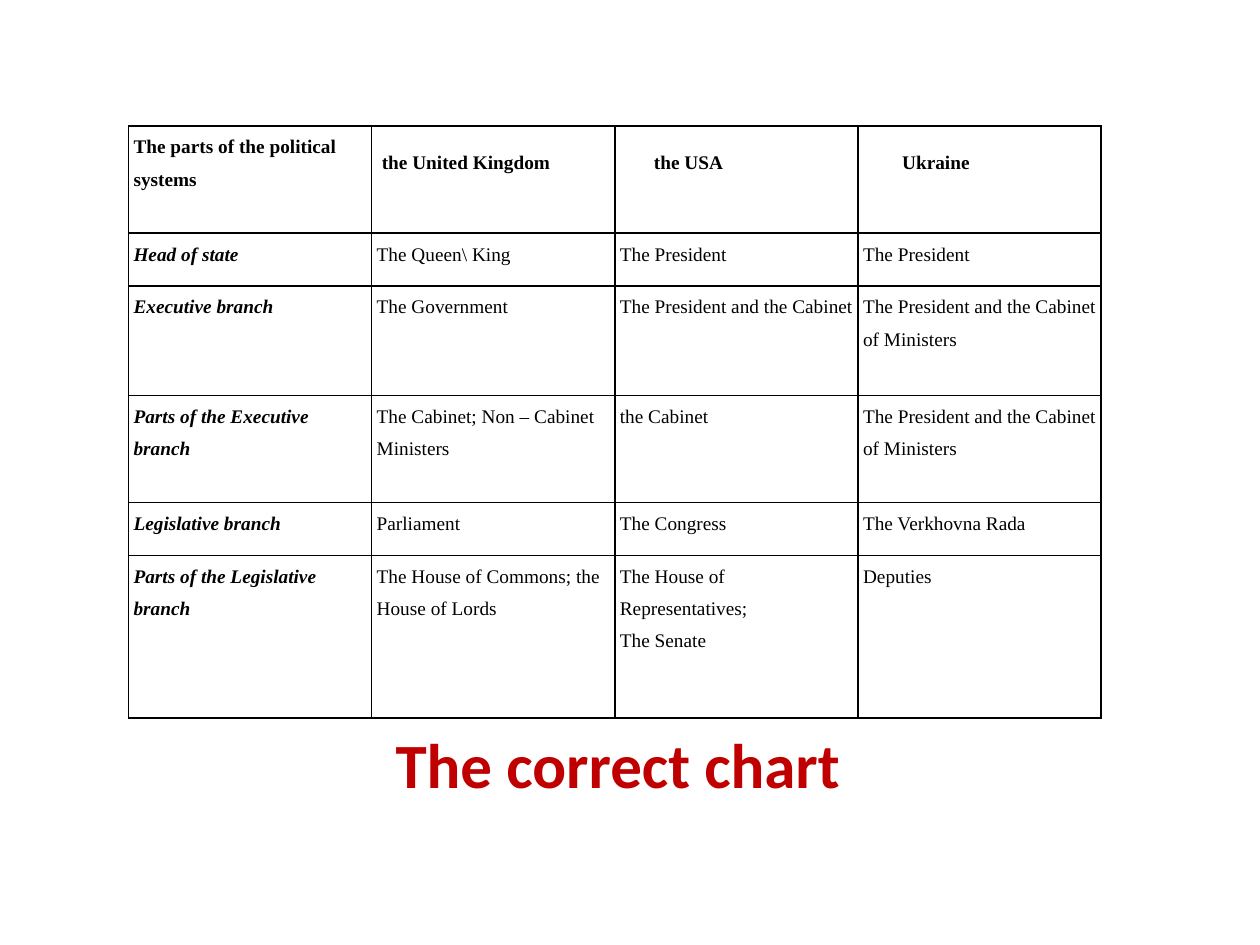
from lxml import etree
from pptx import Presentation
from pptx.dml.color import RGBColor
from pptx.enum.text import MSO_ANCHOR, PP_ALIGN
from pptx.oxml.ns import qn
from pptx.util import Inches, Pt

CENTER = PP_ALIGN.CENTER
BOTTOM = MSO_ANCHOR.BOTTOM
TITLE_ONLY = 5
COLORS = {"title": "C00000", "text": "000000", "border": "000000"}
COLUMN_WIDTH = 1.93
ROW_HEIGHTS = [0.85, 0.42, 0.87, 0.85, 0.42, 1.29]
HEADER_INDENTS = [0, 0.04, 0.27, 0.31]
HEADER_DROP = 0.12
CELL_MARGIN = 0.04
ROWS = [
    ["The parts of the political systems", "the United Kingdom", "the USA", "Ukraine"],
    ["Head of state", "The Queen\\ King", "The President", "The President"],
    ["Executive branch", "The Government", "The President and the Cabinet",
     "The President and the Cabinet of Ministers"],
    ["Parts of the Executive branch", "The Cabinet; Non – Cabinet Ministers",
     "the Cabinet", "The President and the Cabinet of Ministers"],
    ["Legislative branch", "Parliament", "The Congress", "The Verkhovna Rada"],
    ["Parts of the Legislative branch", "The House of Commons; the House of Lords",
     "The House of Representatives;\nThe Senate", "Deputies"],
]


def format_font(font, name, size, color, bold=False, italic=False):
    """Set the face, size, colour and weight of a font."""
    font.name = name
    font.size = Pt(size)
    font.color.rgb = RGBColor.from_string(COLORS[color])
    font.bold = bold
    font.italic = italic


def add_borders(cell):
    """Draw a thin solid line on all four sides of a cell."""
    properties = cell._tc.get_or_add_tcPr()
    for side in ("lnL", "lnR", "lnT", "lnB"):
        line = etree.SubElement(properties, qn(f"a:{side}"), w=str(Pt(1)))
        fill = etree.SubElement(line, qn("a:solidFill"))
        etree.SubElement(fill, qn("a:srgbClr"), val=COLORS["border"])


def fill_cell(cell, text, bold, italic, indent, drop):
    """Write and format the text of one table cell."""
    add_borders(cell)
    cell.fill.background()
    cell.margin_left = Inches(CELL_MARGIN + indent)
    cell.margin_right = Inches(CELL_MARGIN)
    cell.margin_top = Inches(drop)
    cell.margin_bottom = 0
    cell.text_frame.text = text
    for paragraph in cell.text_frame.paragraphs:
        paragraph.line_spacing = 1.5
        for run in paragraph.runs:
            format_font(run.font, "Times New Roman", 11, "text", bold, italic)


def add_systems_table(slide):
    """Add the table that compares the three political systems."""
    column_count = len(ROWS[0])
    table = slide.shapes.add_table(
        len(ROWS), column_count, Inches(1.02), Inches(1),
        Inches(COLUMN_WIDTH * column_count), Inches(sum(ROW_HEIGHTS))).table
    table.first_row = False
    table.horz_banding = False
    for column in table.columns:
        column.width = Inches(COLUMN_WIDTH)
    for row_index, texts in enumerate(ROWS):
        table.rows[row_index].height = Inches(ROW_HEIGHTS[row_index])
        is_header = row_index == 0
        for column_index, text in enumerate(texts):
            is_label = column_index == 0
            fill_cell(
                table.cell(row_index, column_index), text,
                bold=is_header or is_label,
                italic=is_label and not is_header,
                indent=HEADER_INDENTS[column_index] if is_header else 0,
                drop=HEADER_DROP if is_header and not is_label else 0)


def set_title(slide, text):
    """Move the title placeholder below the table and format it."""
    title = slide.shapes.title
    title.left, title.top = Inches(1.96), Inches(5.55)
    title.width, title.height = Inches(6), Inches(0.86)
    title.text_frame.text = text
    title.text_frame.vertical_anchor = BOTTOM
    paragraph = title.text_frame.paragraphs[0]
    paragraph.alignment = CENTER
    format_font(paragraph.runs[0].font, "Calibri", 36, "title", bold=True)


def main():
    """Build the slide and save it."""
    presentation = Presentation()
    presentation.slide_width = Inches(10)
    presentation.slide_height = Inches(7.5)
    slide = presentation.slides.add_slide(presentation.slide_layouts[TITLE_ONLY])
    set_title(slide, "The correct chart ")
    add_systems_table(slide)
    presentation.save("out.pptx")


if __name__ == "__main__":
    main()
